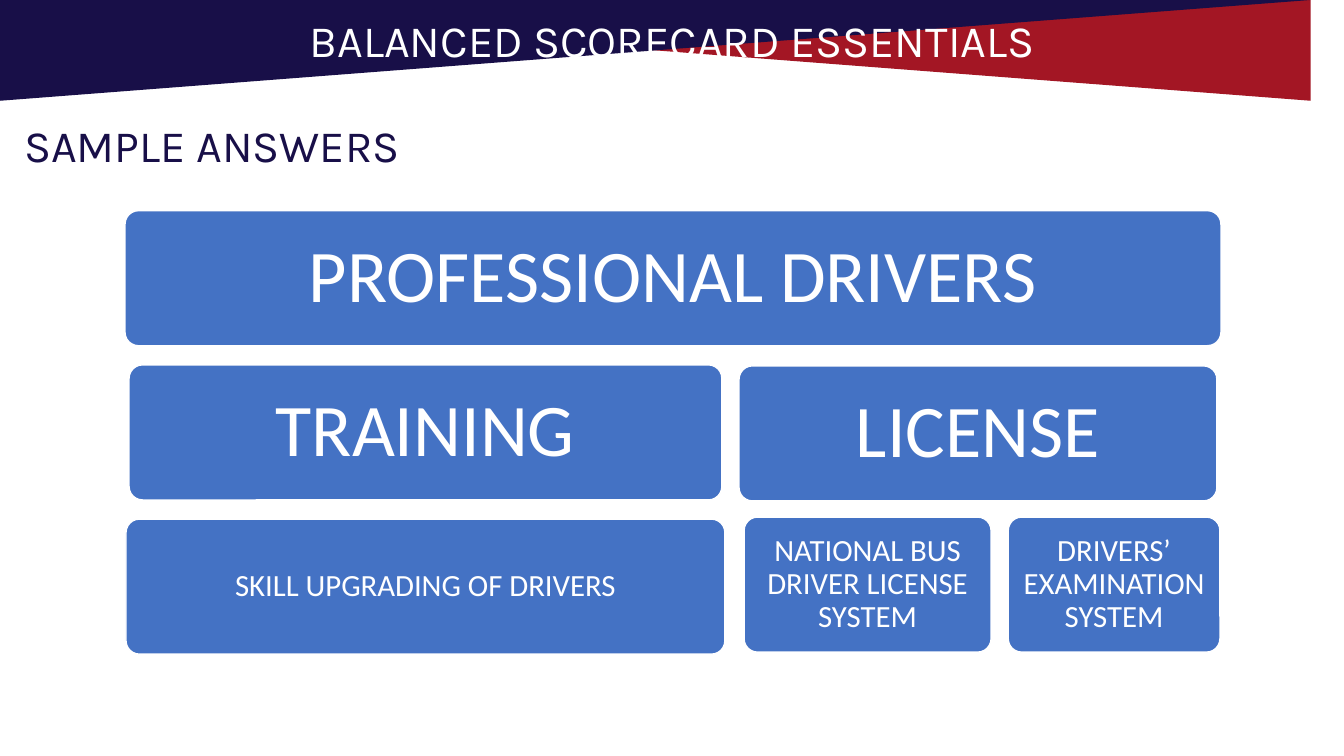
from dataclasses import dataclass

from pptx import Presentation
from pptx.dml.color import RGBColor
from pptx.enum.shapes import MSO_SHAPE as Preset
from pptx.enum.text import MSO_ANCHOR as Anchor, MSO_AUTO_SIZE as AutoSize, PP_ALIGN as Align
from pptx.util import Inches, Pt


@dataclass(frozen=True)
class Theme:
    """Colours, fonts and type sizes of the slide."""
    navy: RGBColor = RGBColor(0x18, 0x0F, 0x48)
    red: RGBColor = RGBColor(0xA3, 0x16, 0x24)
    blue: RGBColor = RGBColor(0x44, 0x72, 0xC4)
    white: RGBColor = RGBColor(0xFF, 0xFF, 0xFF)
    heading_font: str = "Karla"
    body_font: str = "Calibri"
    heading_size: int = 32
    large_size: int = 53
    small_size: int = 22


THEME = Theme()
SLIDE_WIDTH = 13.33
SLIDE_HEIGHT = 7.5
CARD_HEIGHT = 1.34
LARGE_INSET = 0.22
SMALL_INSET = 0.09

LARGE_CARDS = [
    ("PROFESSIONAL DRIVERS", 1.24, 2.09, 10.87),
    ("TRAINING", 1.28, 3.62, 5.88),
    ("LICENSE", 7.33, 3.63, 4.74),
]
SMALL_CARDS = [
    ("SKILL UPGRADING OF DRIVERS", 1.25, 5.15, 5.94),
    ("NATIONAL BUS DRIVER LICENSE SYSTEM", 7.38, 5.13, 2.45),
    ("DRIVERS’ EXAMINATION SYSTEM", 10, 5.13, 2.1),
]


def place(shape, left, top, width, height):
    """Set the position and size of a shape in inches."""
    shape.left, shape.top = Inches(left), Inches(top)
    shape.width, shape.height = Inches(width), Inches(height)


def write(shape, text, font, size, color, align):
    """Write one vertically centred line of text into a shape."""
    frame = shape.text_frame
    frame.word_wrap = True
    frame.auto_size = AutoSize.NONE
    frame.vertical_anchor = Anchor.MIDDLE
    paragraph = frame.paragraphs[0]
    paragraph.alignment = align
    paragraph.line_spacing = 0.9
    paragraph.space_before = Pt(0)
    run = paragraph.add_run()
    run.text = text
    run.font.name = font
    run.font.size = Pt(size)
    run.font.color.rgb = color


def add_band(slide, left_depth, right_depth, color):
    """Add a slanted band across the top of the slide."""
    builder = slide.shapes.build_freeform(0, 0, scale=Inches(1))
    builder.add_line_segments(
        [(SLIDE_WIDTH, 0), (SLIDE_WIDTH, right_depth), (0, left_depth)])
    band = builder.convert_to_shape()
    band.shadow.inherit = False
    band.fill.solid()
    band.fill.fore_color.rgb = color
    band.line.fill.background()


def add_title(slide, text):
    """Format the title placeholder and bring it in front of the bands."""
    title = slide.shapes.title
    place(title, 0.92, -0.07, 11.5, 0.99)
    write(title, text, THEME.heading_font, THEME.heading_size, THEME.white, Align.CENTER)
    title.element.getparent().append(title.element)


def add_subtitle(slide, text):
    """Add the heading below the bands."""
    box = slide.shapes.add_textbox(
        Inches(0.14), Inches(1.04), Inches(10.56), Inches(0.86))
    write(box, text, THEME.heading_font, THEME.heading_size, THEME.navy, Align.LEFT)


def add_card(slide, text, left, top, width, size, inset):
    """Add a rounded blue card with centred text."""
    card = slide.shapes.add_shape(
        Preset.ROUNDED_RECTANGLE,
        Inches(left), Inches(top), Inches(width), Inches(CARD_HEIGHT))
    card.adjustments[0] = 0.1
    card.shadow.inherit = False
    card.fill.solid()
    card.fill.fore_color.rgb = THEME.blue
    card.line.color.rgb = THEME.white
    card.line.width = Pt(1)
    frame = card.text_frame
    frame.margin_left = frame.margin_right = Inches(inset)
    frame.margin_top = frame.margin_bottom = Inches(inset)
    write(card, text, THEME.body_font, size, THEME.white, Align.CENTER)


def main():
    """Build and save the slide."""
    presentation = Presentation()
    presentation.slide_width = Inches(SLIDE_WIDTH)
    presentation.slide_height = Inches(SLIDE_HEIGHT)
    slide = presentation.slides.add_slide(presentation.slide_layouts.get_by_name("Title Only"))
    add_band(slide, 0.35, 1.02, THEME.red)
    add_band(slide, 1.01, 0.34, THEME.navy)
    add_title(slide, "BALANCED SCORECARD ESSENTIALS")
    add_subtitle(slide, "SAMPLE ANSWERS")
    for card in LARGE_CARDS:
        add_card(slide, *card, THEME.large_size, LARGE_INSET)
    for card in SMALL_CARDS:
        add_card(slide, *card, THEME.small_size, SMALL_INSET)
    presentation.save("out.pptx")


if __name__ == "__main__":
    main()
